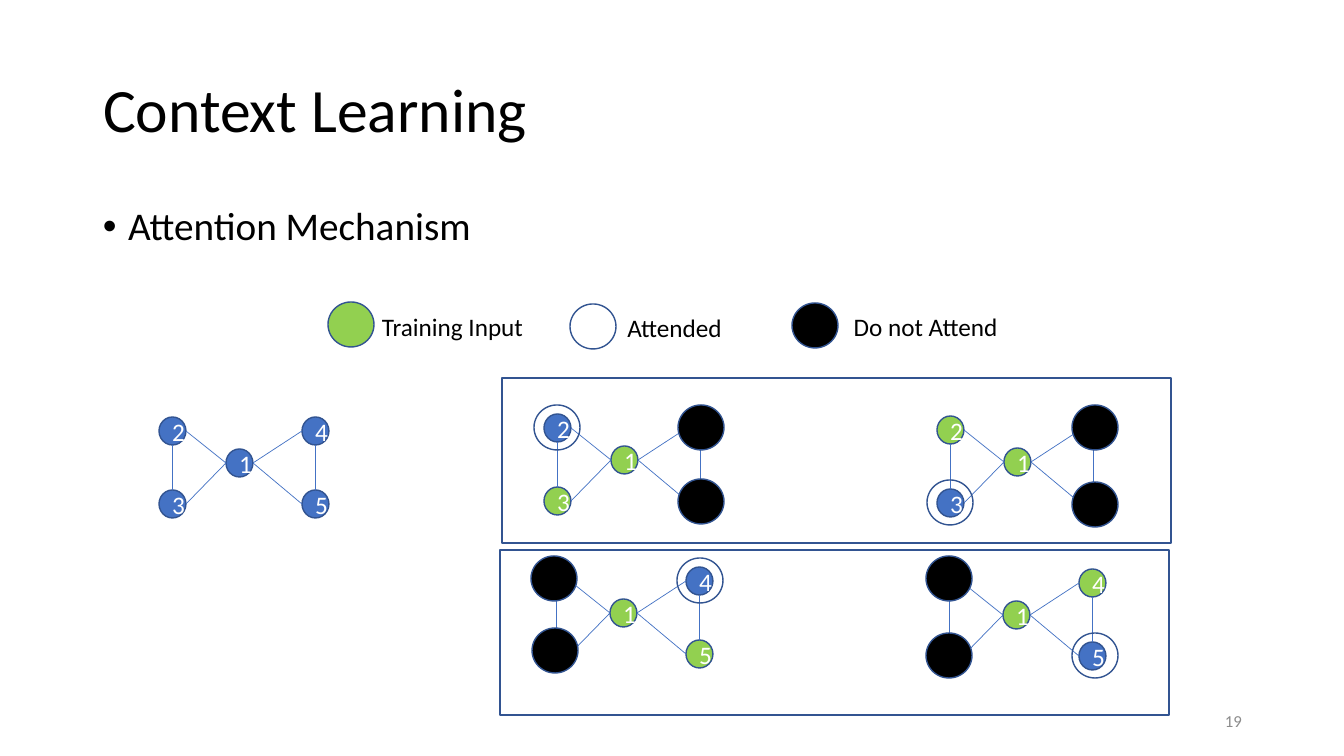
from pptx import Presentation, util as u
from pptx.dml.color import RGBColor
from pptx.enum import shapes, text
from pptx.oxml import parse_xml
from pptx.oxml.ns import nsdecls

# Content, lengths in px
HUE = {"blue": "4472C4", "green": "92D050", "black": "000000",
       "edge": "325491", "white": "FFFFFF", "gray": "8C8C8C"}
FONT = "Calibri"
TITLE = ("Context Learning", (93, 40, 1159, 146))
BODY = ("Attention Mechanism", (93, 202, 1159, 480))
PAGE = ("19", (950, 701, 302, 40))
LEGEND = [  # label, fill, circle corner, label corner
    ("Training Input", "green", (328, 302), (347, 304)),
    ("Attended", None, (570, 304), (569, 305)),
    ("Do not Attend", "black", (792, 303), (820, 304)),
]
LABEL = (211, 45)
FRAMES = [(502, 378, 669, 165), (500, 550, 669, 165)]
NODE, RING = (27, 28), (46, 45)
SPOTS = {2: (0, 0), 1: (67, 32), 3: (0, 73), 5: (143, 73), 4: (143, 0)}
EDGES = [(3, "right", 1, "left"), (2, "right", 1, "left"),
         (2, "bottom", 3, "top"), (1, "right", 4, "left"),
         (1, "right", 5, "left"), (4, "bottom", 5, "top")]
SIDES = {"left": (0, 0.5), "right": (1, 0.5),
         "top": (0.5, 0), "bottom": (0.5, 1)}
GRAPHS = [  # corner, training nodes, attended rings, masked nodes
    ((159, 417), (), {}, {}),
    ((544, 414), (1, 3), {2: (534, 405)}, {4: (678, 405), 5: (678, 479)}),
    ((937, 416), (1, 2), {3: (927, 480)}, {4: (1072, 405), 5: (1072, 482)}),
    ((543, 567), (1, 5), {4: (677, 558)}, {2: (531, 556), 3: (532, 628)}),
    ((936, 569), (1, 4), {5: (1072, 633)}, {2: (926, 556), 3: (926, 633)}),
]


def px(n):
    return u.Emu(round(n * 914400 / 100.8))


def rgb(name):
    return RGBColor.from_string(HUE[name])


def put(obj, form):
    for key, val in form.items():
        setattr(obj, key, val)


def write(shape, words, size, hue, para, anchor=text.MSO_ANCHOR.MIDDLE):
    frame = shape.text_frame
    put(frame, {"word_wrap": True, "vertical_anchor": anchor,
                "auto_size": text.MSO_AUTO_SIZE.NONE})
    line = frame.paragraphs[0]
    put(line, para)
    run = line.add_run()
    put(run, {"text": words})
    put(run.font, {"size": u.Pt(size), "name": FONT})
    run.font.color.rgb = rgb(hue)
    return line


def note(box, *style, **more):
    return write(slide.shapes.add_textbox(*map(px, box)), *style, **more)


def draw(kind, box, fill=None):
    shape = slide.shapes.add_shape(kind, *map(px, box))
    shape.shadow.inherit = False
    if fill:
        shape.fill.solid()
        shape.fill.fore_color.rgb = rgb(fill)
    else:
        shape.fill.background()
    shape.line.color.rgb = rgb("edge")
    shape.line.width = u.Pt(1)
    return shape


def disc(spot, size, fill=None):
    return draw(shapes.MSO_SHAPE.OVAL, (*spot, *size), fill)


def join(start, end):
    line = slide.shapes.add_connector(
        shapes.MSO_CONNECTOR.STRAIGHT, *map(px, (*start, *end)))
    line.line.color.rgb = rgb("blue")
    line.line.width = u.Pt(0.5)
    line._element.spPr.append(parse_xml(f"<a:effectLst {nsdecls('a')}/>"))


def graph(corner, trained, rings, masks):
    spots = {n: (corner[0] + x, corner[1] + y) for n, (x, y) in SPOTS.items()}

    def port(n, side):
        return [p + s * f for p, s, f in zip(spots[n], NODE, SIDES[side])]

    for n, spot in spots.items():
        if n not in masks:
            node = disc(spot, NODE, "green" if n in trained else "blue")
            write(node, str(n), 18, "white", MID)
    for a, out, b, into in EDGES:
        join(port(a, out), port(b, into))
    for spot in rings.values():
        disc(spot, RING)
    for spot in masks.values():
        disc(spot, RING, "black")


MID = {"alignment": text.PP_ALIGN.CENTER}
LEFT = {"alignment": text.PP_ALIGN.LEFT, "line_spacing": 0.9}

deck = Presentation()
put(deck, {"slide_width": px(1344), "slide_height": px(756)})
slide = deck.slides.add_slide(deck.slide_layouts[5])

# Title, bullet and page number
head = slide.shapes.title
put(head, dict(zip(("left", "top", "width", "height"), map(px, TITLE[1]))))
write(head, TITLE[0], 44, "black", LEFT)
item = note(BODY[1], BODY[0], 28, "black", {**LEFT, "space_before": u.Pt(10)},
            anchor=text.MSO_ANCHOR.TOP)
props = item._p.get_or_add_pPr()
props.set("marL", str(u.Inches(0.25)))
props.set("indent", str(-u.Inches(0.25)))
props.append(parse_xml(f'<a:buFont {nsdecls("a")} typeface="Arial"/>'))
props.append(parse_xml(f'<a:buChar {nsdecls("a")} char="•"/>'))
note(PAGE[1], PAGE[0], 12, "gray", {"alignment": text.PP_ALIGN.RIGHT})

# Legend
for words, fill, spot, place in LEGEND:
    disc(spot, RING, fill)
    note((*place, *LABEL), words, 18, "black", MID)

# Frames and graphs
for box in FRAMES:
    draw(shapes.MSO_SHAPE.RECTANGLE, box)
for parts in GRAPHS:
    graph(*parts)

deck.save("out.pptx")
